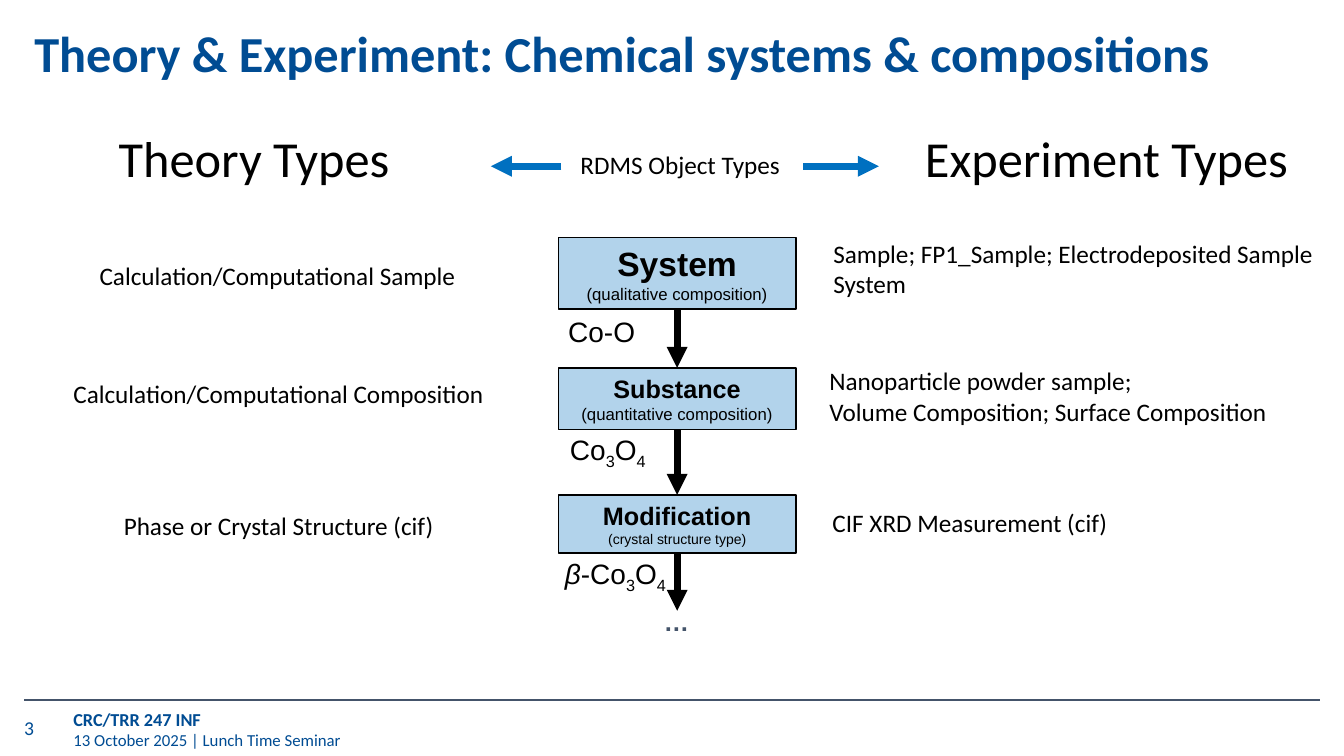
from lxml import etree
from pptx import Presentation
from pptx.dml.color import RGBColor
from pptx.enum.shapes import MSO_CONNECTOR as Conn, MSO_SHAPE as Shape
from pptx.enum.text import MSO_ANCHOR as Anchor, MSO_AUTO_SIZE as AutoSize, PP_ALIGN as Align
from pptx.oxml.ns import qn
from pptx.util import Cm, Pt

NAVY = RGBColor(0x00, 0x4C, 0x93)
BLUE = RGBColor(0x00, 0x70, 0xC0)
SLATE = RGBColor(0x44, 0x54, 0x6A)
BLACK = RGBColor(0, 0, 0)

TITLE = "Theory & Experiment: Chemical systems & compositions"
FOOTER = [[("CRC/TRR 247 INF", {"size": 13, "bold": True})],
          [("13 October 2025 | Lunch Time Seminar", {})]]
HEADINGS = [
    ("Theory Types", 2.74, 3.07, 8, 36),
    ("RDMS Object Types", 14.38, 3.63, 6, 18),
    ("Experiment Types", 23.06, 3.07, 10.5, 36),
]
LEVELS = [
    ("System", 24, "(qualitative composition)", 12, 5.99, 1.8),
    ("Substance", 18, "(quantitative composition)", 12, 9.27, 1.55),
    ("Modification", 18, "(crystal structure type)", 10, 12.47, 1.47),
]
SUB = {"baseline": -25}
OXIDE = [("3", SUB), ("O", {}), ("4", SUB)]
FORMULAS = [
    ([("Co-O", {})], 14.07, 7.8, 2.79, 1.09, Align.LEFT),
    ([("Co", {}), *OXIDE], 13.87, 10.97, 2.9, 0.81, Align.CENTER),
    ([("β", {"italic": True}), ("-Co", {}), *OXIDE], 13.87, 14, 3.28, 0.99, Align.CENTER),
]
TYPES = [
    (["Calculation/Computational Sample"], 2.26, 6.43, 10.49),
    (["Calculation/Computational Composition"], 1.6, 9.4, 11.38),
    (["Phase or Crystal Structure (cif)"], 2.87, 12.73, 9.04),
    (["Sample; FP1_Sample; Electrodeposited Sample", "System"], 20.75, 5.87, 12.8),
    (["Nanoparticle powder sample;", "Volume Composition; Surface Composition"],
     20.65, 9.09, 12.88),
    (["CIF XRD Measurement (cif)"], 20.73, 12.65, 8.43),
]
BOX_X, BOX_W = 14.07, 5.99
MID_X = BOX_X + BOX_W / 2
CHAIN_END = 15.39
ARROW_Y = 4.19
SIDE_ARROWS = [(14.15, 12.37), (20.24, 22.15)]


def write(sp, paras, font="Calibri", size=18, color=BLACK, bold=False,
          align=Align.LEFT, anchor=Anchor.TOP, spacing=None):
    """Fill a shape with paragraphs given as strings or lists of (text, format) runs."""
    tf = sp.text_frame
    tf.word_wrap = True
    tf.auto_size = AutoSize.NONE
    tf.vertical_anchor = anchor
    for i, runs in enumerate(paras):
        p = tf.add_paragraph() if i else tf.paragraphs[0]
        p.alignment = align
        p.line_spacing = spacing
        for text, fmt in [(runs, {})] if isinstance(runs, str) else runs:
            r = p.add_run()
            r.text = text
            r.font.name = font
            r.font.size = Pt(fmt.get("size", size))
            r.font.bold = fmt.get("bold", bold)
            r.font.italic = fmt.get("italic", False)
            r.font.color.rgb = color
            if "baseline" in fmt:
                r._r.get_or_add_rPr().set("baseline", str(fmt["baseline"] * 1000))
    return tf


def add_text(s, paras, x, y, w, h, **fmt):
    """Add a text box measured in centimetres."""
    return write(s.shapes.add_textbox(Cm(x), Cm(y), Cm(w), Cm(h)), paras, **fmt)


def add_line(s, x1, y1, x2, y2, color, width, arrow=True):
    """Add a straight line, with an arrowhead at its end if wanted."""
    line = s.shapes.add_connector(Conn.STRAIGHT, Cm(x1), Cm(y1), Cm(x2), Cm(y2))
    line.line.color.rgb = color
    line.line.width = Pt(width)
    if arrow:
        etree.SubElement(line.line._get_or_add_ln(), qn("a:tailEnd"), type="triangle")
    etree.SubElement(line._element.spPr, qn("a:effectLst"))
    return line


def add_level(s, name, name_size, note, note_size, y, h):
    """Add one tinted box of the composition chain."""
    sp = s.shapes.add_shape(Shape.RECTANGLE, Cm(BOX_X), Cm(y), Cm(BOX_W), Cm(h))
    sp.shadow.inherit = False
    sp.fill.solid()
    sp.fill.fore_color.rgb = BLUE
    tint = sp._element.spPr.find(qn("a:solidFill"))[0]
    etree.SubElement(tint, qn("a:alpha"), val="30000")
    sp.line.color.rgb = BLACK
    sp.line.width = Pt(1)
    write(sp, [[(name, {"size": name_size, "bold": True})], [(note, {"size": note_size})]],
          font="Arial", align=Align.CENTER, anchor=Anchor.MIDDLE)
    return sp


def main():
    """Build the slide and save it."""
    prs = Presentation()
    prs.slide_width, prs.slide_height = Cm(33.87), Cm(19.05)
    s = prs.slides.add_slide(prs.slide_layouts[5])

    title = s.shapes.title
    title.left, title.top, title.width, title.height = Cm(0.61), Cm(0.3), Cm(32.69), Cm(2.21)
    write(title, [TITLE], size=36, color=NAVY, bold=True, anchor=Anchor.MIDDLE, spacing=0.9)

    add_line(s, 0.61, 17.63, 33.27, 17.63, SLATE, 1.5, arrow=False)
    number = add_text(s, ["3"], 0.61, 17.75, 1.35, 1.19, size=14, color=NAVY,
                      anchor=Anchor.MIDDLE)
    number.margin_left = 0
    add_text(s, FOOTER, 1.6, 17.7, 13.87, 1.35, size=12, color=NAVY, anchor=Anchor.MIDDLE)

    for text, x, y, w, size in HEADINGS:
        add_text(s, [text], x, y, w, size / 20, size=size)
    for start, end in SIDE_ARROWS:
        add_line(s, start, ARROW_Y, end, ARROW_Y, BLUE, 5)

    boxes = [add_level(s, *level) for level in LEVELS]
    for i, box in enumerate(boxes):
        arrow = add_line(s, MID_X, LEVELS[i][4] + LEVELS[i][5], MID_X, CHAIN_END, BLACK, 5)
        arrow.begin_connect(box, 2)
        if i + 1 < len(boxes):
            arrow.end_connect(boxes[i + 1], 0)
    add_text(s, ["…"], 16.48, 15.16, 1.14, 1.02, font="Arial", color=SLATE, bold=True)

    for runs, x, y, w, h, align in FORMULAS:
        add_text(s, [runs], x, y, w, h, font="Arial", size=20, align=align,
                 anchor=Anchor.MIDDLE)
    for lines, x, y, w in TYPES:
        add_text(s, lines, x, y, w, 0.24 + 0.78 * len(lines))

    prs.save("out.pptx")


if __name__ == "__main__":
    main()
